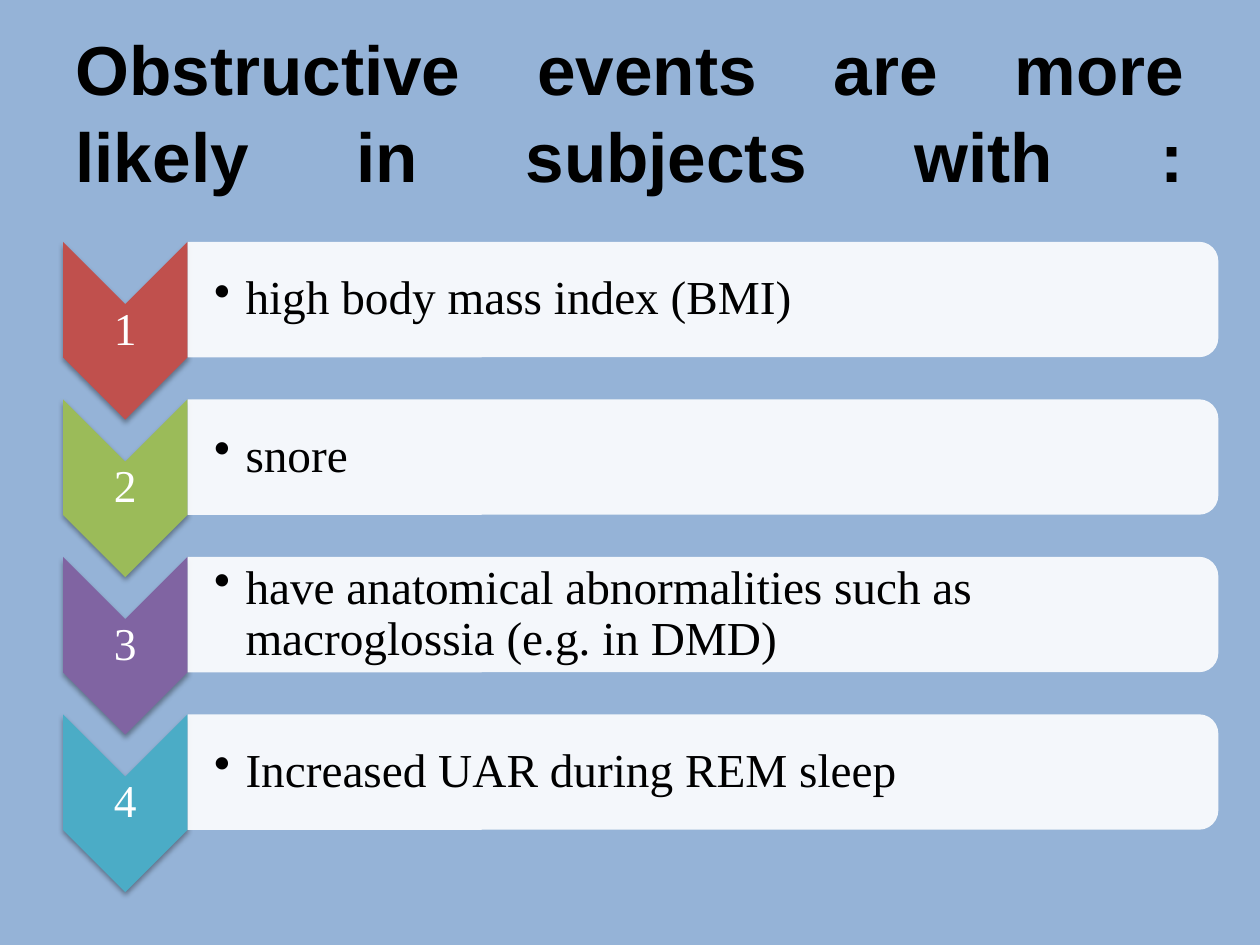
from lxml.etree import SubElement
from pptx import Presentation
from pptx.dml.color import RGBColor
from pptx.enum.shapes import MSO_SHAPE as SHAPE
from pptx.enum.text import MSO_ANCHOR as ANCHOR, PP_ALIGN as ALIGN
from pptx.oxml.ns import qn
from pptx.util import Pt


def rgb(color):
    return RGBColor.from_string(color)


def add_turned(kind, left, top, width, height, color):
    """Add a shape turned by 90 degrees that fills the given frame."""
    sp = s.shapes.add_shape(kind, Pt(left + (width - height) / 2),
                            Pt(top + (height - width) / 2), Pt(height), Pt(width))
    sp.rotation = 90
    sp.fill.solid()
    sp.fill.fore_color.rgb = rgb(color)
    sp.line.fill.background()
    sp.shadow.inherit = False
    return sp


prs = Presentation()
prs.slide_width, prs.slide_height = Pt(720), Pt(540)
s = prs.slides.add_slide(prs.slide_layouts[5])
s.background.fill.solid()
s.background.fill.fore_color.rgb = rgb("95B3D7")

# Title: the line breaks keep its last line justified
title = s.shapes.title
title.left, title.top, title.width, title.height = Pt(36), Pt(66), Pt(648), Pt(90)
tf = title.text_frame
tf.text = "Obstructive events are more likely in subjects with :\v\v"
tf.word_wrap = True
tf.vertical_anchor = ANCHOR.MIDDLE
p = tf.paragraphs[0]
p.alignment = ALIGN.JUSTIFY
p.line_spacing = 1.04
p.font.name, p.font.size, p.font.bold = "Arial", Pt(39.6), True
p.font.color.rgb = rgb("000000")

# Numbered list of risk factors
items = [
    ("C0504D", "high body mass index (BMI)"),
    ("9BBB59", "snore"),
    ("8064A2", "have anatomical abnormalities such as macroglossia (e.g. in DMD)"),
    ("4BACC6", "Increased UAR during REM sleep"),
]
LEFT, TOP, PITCH = 36, 138.2, 90
CHEVRON_W, CHEVRON_H = 71.2, 101.6
BAR_W, BAR_H = 589, 66

for i, (color, text) in enumerate(items):
    top = TOP + i * PITCH
    bar_left = LEFT + CHEVRON_W

    # Chevron with a soft shadow below
    chevron = add_turned(SHAPE.CHEVRON, LEFT, top, CHEVRON_W, CHEVRON_H, color)
    effects = chevron._element.spPr.find(qn("a:effectLst"))
    shadow = SubElement(effects, qn("a:outerShdw"), blurRad=str(Pt(3.1)),
                        dist=str(Pt(1.8)), dir="5400000", rotWithShape="0")
    black = SubElement(shadow, qn("a:srgbClr"), val="000000")
    SubElement(black, qn("a:alpha"), val="35000")

    # Translucent bar
    bar = add_turned(SHAPE.ROUND_2_SAME_RECTANGLE, bar_left, top, BAR_W, BAR_H, "FFFFFF")
    white = bar._element.spPr.find(qn("a:solidFill"))[0]
    SubElement(white, qn("a:alpha"), val="90000")

    # Number and bulleted text
    for words, x, y, w, h, inset, size, ink in [
        (str(i + 1), LEFT, top + 35.6, CHEVRON_W, 30.4, 1.4, 26, "FFFFFF"),
        (text, bar_left, top + 3, BAR_W - 3.6, 60, 15.1, 27, "000000"),
    ]:
        tf = s.shapes.add_textbox(Pt(x), Pt(y), Pt(w), Pt(h)).text_frame
        tf.word_wrap = True
        tf.vertical_anchor = ANCHOR.MIDDLE
        tf.margin_left = Pt(inset)
        tf.margin_top = tf.margin_right = tf.margin_bottom = Pt(1.4)
        p = tf.paragraphs[0]
        p.text = words
        p.line_spacing = 0.9
        p.font.name, p.font.size = "Times New Roman", Pt(size)
        p.font.color.rgb = rgb(ink)
        if words is text:
            p.level = 1
            pPr = p._p.get_or_add_pPr()
            pPr.set("marL", str(Pt(18)))
            pPr.set("indent", str(Pt(-18)))
            bullet = pPr.makeelement(qn("a:buChar"), {"char": "•"})
            pPr.insert_element_before(bullet, "a:tabLst", "a:defRPr", "a:extLst")
        else:
            p.alignment = ALIGN.CENTER

prs.save("out.pptx")
